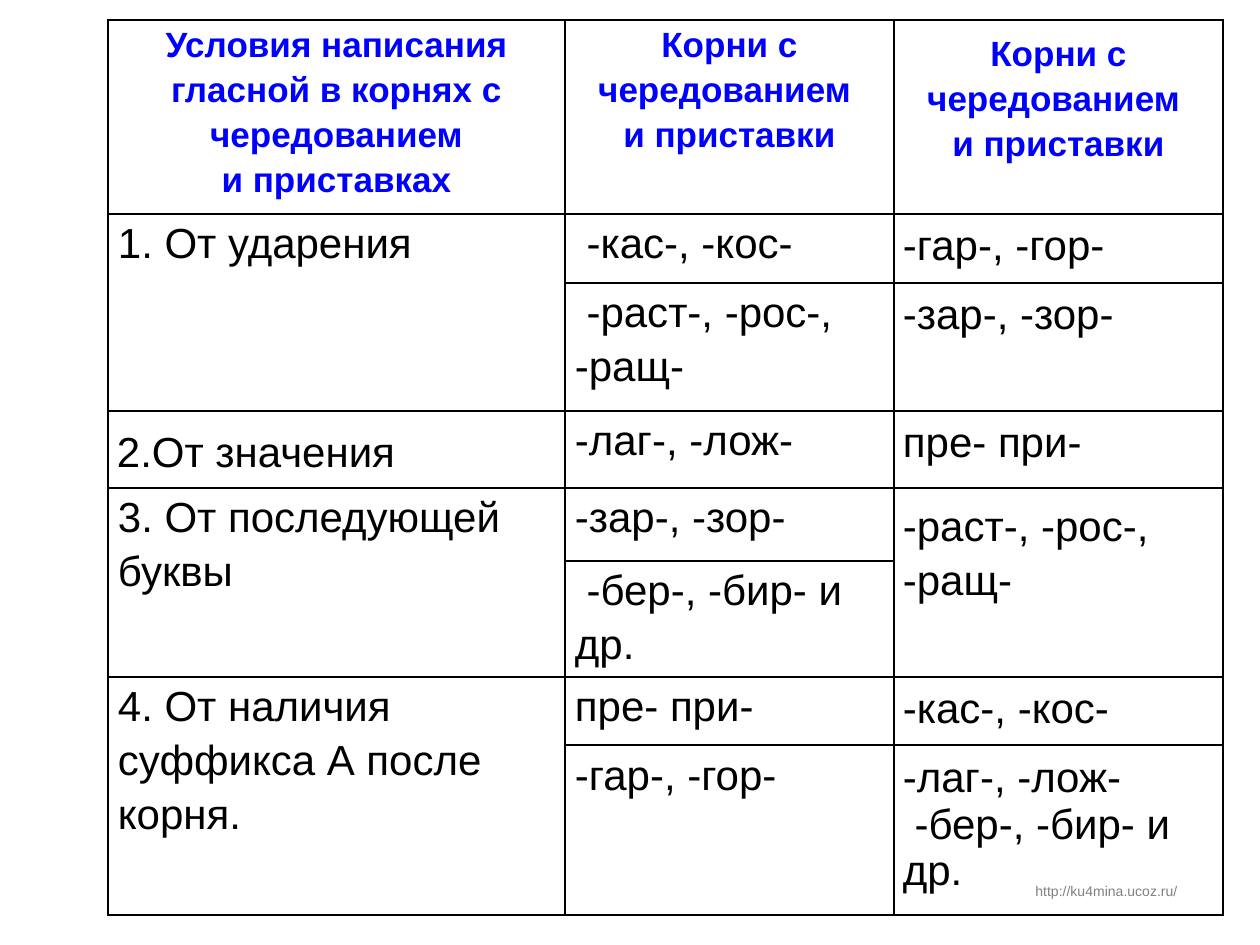
from dataclasses import dataclass

from lxml import etree
from pptx import Presentation
from pptx.dml.color import RGBColor
from pptx.enum.text import MSO_ANCHOR, MSO_AUTO_SIZE, PP_ALIGN
from pptx.oxml.ns import qn
from pptx.util import Emu, Pt

CENTER, JUSTIFY = PP_ALIGN.CENTER, PP_ALIGN.JUSTIFY
TOP, MIDDLE = MSO_ANCHOR.TOP, MSO_ANCHOR.MIDDLE
FIT_SHAPE = MSO_AUTO_SIZE.SHAPE_TO_FIT_TEXT
EMU_PER_PX = 914400 / 126
FONT = "Arial"
COLORS = {"heading": "0000FF", "text": "000000", "border": "000000", "footer": "808080"}
COL_WIDTHS = [457, 329, 329]
ROW_HEIGHTS = [194, 69, 128, 77, 73, 116, 68, 170]
NARROW = (10, 0)
EVEN = (9, 9)


@dataclass
class Entry:
    row: int
    col: int
    lines: list[str]
    margins: tuple[int, int] = NARROW
    spacing: float | None = 1.15
    rows: int = 1
    align: PP_ALIGN | None = None
    anchor: MSO_ANCHOR = TOP


ROOTS_HEADING = ["Корни с чередованием ", "и приставки"]
ENTRIES = [
    Entry(0, 0, ["Условия написания гласной в корнях с чередованием", "и приставках"], align=CENTER),
    Entry(0, 1, ROOTS_HEADING, align=CENTER),
    Entry(0, 2, ROOTS_HEADING, EVEN, align=CENTER),
    Entry(1, 0, ["1. От ударения"], rows=2),
    Entry(1, 1, [" -кас-, -кос-"]),
    Entry(1, 2, ["-гар-, -гор-"], EVEN, None),
    Entry(2, 1, [" -раст-, -рос-,", "-ращ-"]),
    Entry(2, 2, ["-зар-, -зор-"], EVEN, None),
    Entry(3, 0, ["2.От значения"], EVEN, align=JUSTIFY, anchor=MIDDLE),
    Entry(3, 1, ["-лаг-, -лож-"]),
    Entry(3, 2, ["пре- при-"], EVEN, None),
    Entry(4, 0, ["3. От последующей буквы"], rows=2),
    Entry(4, 1, ["-зар-, -зор-"]),
    Entry(4, 2, ["-раст-, -рос-,", "-ращ-"], EVEN, rows=2),
    Entry(5, 1, [" -бер-, -бир- и др."]),
    Entry(6, 0, ["4. От наличия суффикса А после корня."], rows=2),
    Entry(6, 1, ["пре- при-"]),
    Entry(6, 2, ["-кас-, -кос-"], EVEN, None),
    Entry(7, 1, ["-гар-, -гор-"]),
    Entry(7, 2, ["-лаг-, -лож-", " -бер-, -бир- и др."], EVEN, None),
]


def px(n: int) -> Emu:
    return Emu(round(n * EMU_PER_PX))


def set_font(p, size: int, color: str, bold: bool = False) -> None:
    p.font.name = FONT
    p.font.size = Pt(size)
    p.font.bold = bold
    p.font.color.rgb = RGBColor.from_string(COLORS[color])


def set_borders(cell) -> None:
    tc_pr = cell._tc.get_or_add_tcPr()
    for i, side in enumerate(("lnL", "lnR", "lnT", "lnB")):
        ln = etree.Element(qn(f"a:{side}"), w=str(Pt(1)))
        fill = etree.SubElement(ln, qn("a:solidFill"))
        etree.SubElement(fill, qn("a:srgbClr"), val=COLORS["border"])
        tc_pr.insert(i, ln)


def fill_entry(table, entry: Entry) -> None:
    cell = table.cell(entry.row, entry.col)
    if entry.rows > 1:
        cell.merge(table.cell(entry.row + entry.rows - 1, entry.col))
    side, end = entry.margins
    cell.margin_left = cell.margin_right = px(side)
    cell.margin_top = cell.margin_bottom = px(end)
    cell.vertical_anchor = entry.anchor
    tf = cell.text_frame
    tf.text = "\n".join(entry.lines)
    heading = entry.row == 0
    for p in tf.paragraphs:
        p.alignment = entry.align
        p.line_spacing = entry.spacing
        set_font(p, 20 if heading else 24, "heading" if heading else "text", heading)


def add_footer(s) -> None:
    tf = s.shapes.add_textbox(px(1023), px(876), px(173), px(30)).text_frame
    tf.word_wrap = False
    tf.auto_size = FIT_SHAPE
    tf.text = "http://ku4mina.ucoz.ru/"
    set_font(tf.paragraphs[0], 8, "footer")


def add_rules_table(s) -> None:
    table = s.shapes.add_table(
        len(ROW_HEIGHTS), len(COL_WIDTHS), px(108), px(20),
        px(sum(COL_WIDTHS)), px(sum(ROW_HEIGHTS)),
    ).table
    table.first_row = table.horz_banding = False
    for column, width in zip(table.columns, COL_WIDTHS):
        column.width = px(width)
    for row, height in zip(table.rows, ROW_HEIGHTS):
        row.height = px(height)
    for cell in table.iter_cells():
        cell.fill.background()
        set_borders(cell)
    for entry in ENTRIES:
        fill_entry(table, entry)


def main() -> None:
    prs = Presentation()
    prs.slide_width, prs.slide_height = px(1260), px(945)
    s = prs.slides.add_slide(prs.slide_layouts[6])
    add_footer(s)
    add_rules_table(s)
    prs.save("out.pptx")


if __name__ == "__main__":
    main()
